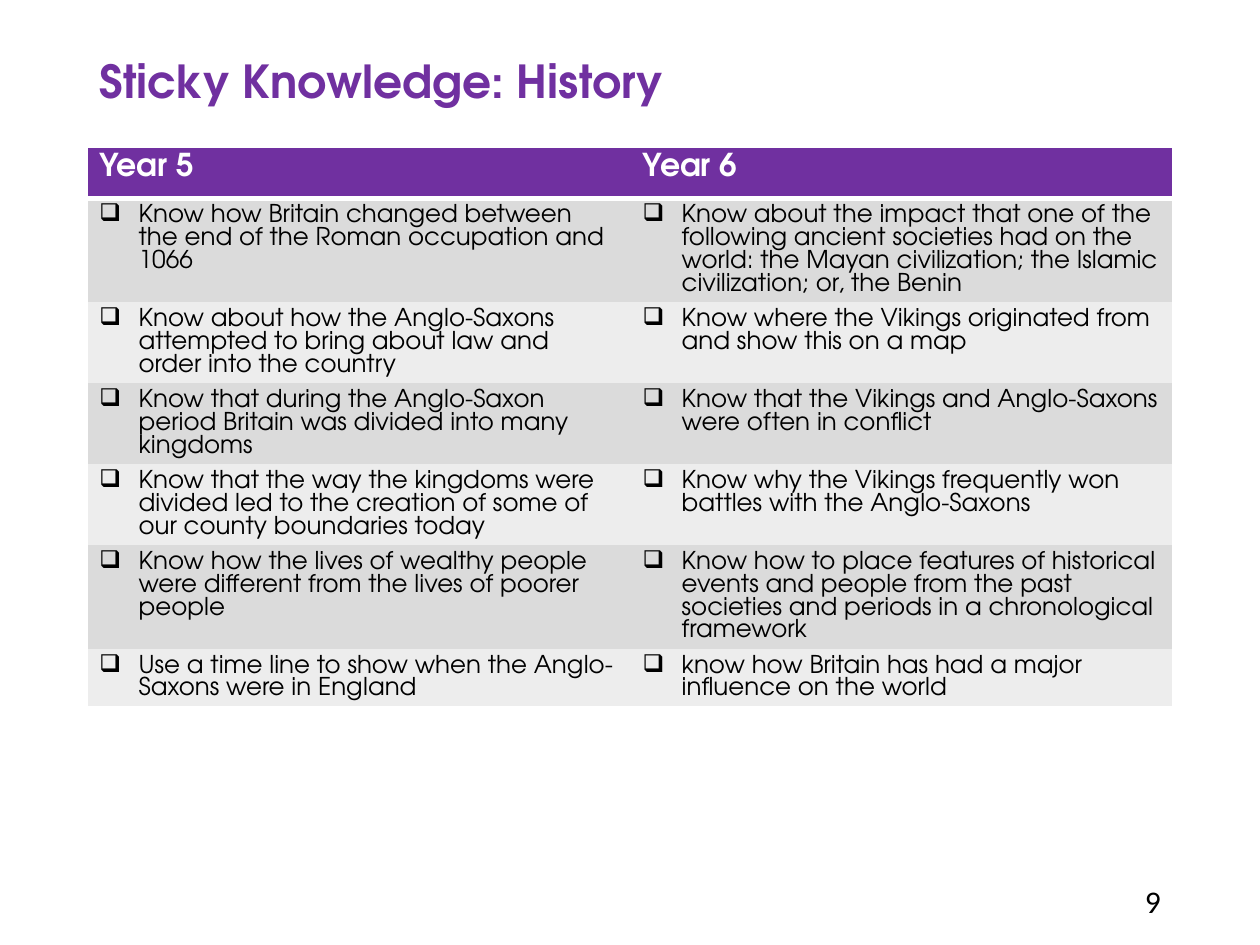
from lxml import etree
from pptx import Presentation
from pptx.dml.color import RGBColor
from pptx.enum.text import MSO_ANCHOR, PP_ALIGN
from pptx.oxml.ns import qn
from pptx.util import Cm, Pt

LEFT, RIGHT = PP_ALIGN.LEFT, PP_ALIGN.RIGHT
MIDDLE = MSO_ANCHOR.MIDDLE
PURPLE = RGBColor(0x70, 0x30, 0xA0)
WHITE = RGBColor(0xFF, 0xFF, 0xFF)
BLACK = RGBColor(0, 0, 0)
BANDS = RGBColor(0xDB, 0xDB, 0xDB), RGBColor(0xED, 0xED, 0xED)
NO_GRID = "{2D5ABB26-0587-4C30-8999-92F81FD0307C}"
BOX_MARK = "q"  # a shadowed box in Wingdings

HEADS = "Year 5", "Year 6"
FACTS = [
    ("Know how Britain changed between the end of the Roman occupation and 1066",
     "Know about the impact that one of the following ancient societies had on the world: "
     "the Mayan civilization; the Islamic civilization; or, the Benin"),
    ("Know about how the Anglo-Saxons attempted to bring about law and order into the country",
     "Know where the Vikings originated from and show this on a map"),
    ("Know that during the Anglo-Saxon period Britain was divided into many kingdoms",
     "Know that the Vikings and Anglo-Saxons were often in conflict"),
    ("Know that the way the kingdoms were divided led to the creation of some of our county "
     "boundaries today",
     "Know why the Vikings frequently won battles with the Anglo-Saxons"),
    ("Know how the lives of wealthy people were different from the lives of poorer people",
     "Know how to place features of historical events and people from the past societies and "
     "periods in a chronological framework"),
    ("Use a time line to show when the Anglo-Saxons were in England",
     "know how Britain has had a major influence on the world"),
]


class Page:
    def __init__(self, slide, font):
        self.slide = slide
        self.font = font

    def style(self, para, size, color, bold=False, font=None):
        for run in para.runs:
            run.font.name = font or self.font
            run.font.size = Pt(size)
            run.font.bold = bold
            run.font.color.rgb = color

    def text(self, words, box, size, color, bold=False, font=None, align=LEFT):
        frame = self.slide.shapes.add_textbox(*map(Cm, box)).text_frame
        frame.word_wrap = True
        frame.vertical_anchor = MIDDLE
        frame.text = words
        para = frame.paragraphs[0]
        para.alignment = align
        self.style(para, size, color, bold, font)
        return para

    def bullet(self, para, mark, indent):
        props = para._p.get_or_add_pPr()
        props.set("marL", str(indent))
        props.set("indent", str(-indent))
        etree.SubElement(props, qn("a:buFont"), typeface="Wingdings", charset="2")
        etree.SubElement(props, qn("a:buChar"), char=mark)

    def border(self, cell, side, width):
        """Draw a white line on one side: L, R, T or B, added in that order."""
        props = cell._tc.get_or_add_tcPr()
        line = etree.SubElement(props, qn("a:ln" + side), w=str(Pt(width)))
        fill = etree.SubElement(line, qn("a:solidFill"))
        etree.SubElement(fill, qn("a:srgbClr"), val=str(WHITE))

    def table(self, heads, facts, box, row_height):
        rows = [heads, *facts]
        last = len(rows) - 1
        grid = self.slide.shapes.add_table(
            len(rows), len(heads), *map(Cm, box), Cm(row_height * len(rows))).table
        grid._tbl.tblPr.find(qn("a:tableStyleId")).text = NO_GRID
        grid.horz_banding = False
        for r, row in enumerate(rows):
            grid.rows[r].height = Cm(row_height)
            for c, words in enumerate(row):
                cell = grid.cell(r, c)
                self.border(cell, "L" if c == 0 else "R", 1)
                if r == 0:
                    self.border(cell, "T", 1)
                if r in (0, last):
                    self.border(cell, "B", 3 if r == 0 else 1)
                cell.fill.solid()
                cell.text_frame.text = words
                para = cell.text_frame.paragraphs[0]
                if r == 0:
                    cell.fill.fore_color.rgb = PURPLE
                    self.style(para, 18, WHITE, True)
                else:
                    cell.fill.fore_color.rgb = BANDS[(r - 1) % 2]
                    para.line_spacing = Pt(13)
                    self.bullet(para, BOX_MARK, Cm(0.79))
                    self.style(para, 14, BLACK)


def main():
    deck = Presentation()
    deck.slide_width, deck.slide_height = Cm(25.4), Cm(19.05)
    page = Page(deck.slides.add_slide(deck.slide_layouts[6]), "TeX Gyre Adventor")
    title = page.text("Sticky Knowledge: History", (1.75, 1.02, 21.9, 1.35), 26, PURPLE, True)
    title.line_spacing = 0.9
    page.table(HEADS, FACTS, (1.75, 2.97, 21.9), 1.03)
    page.text("9", (17.93, 17.65, 5.72, 1.02), 18, BLACK, font="Calibri", align=RIGHT)
    deck.save("out.pptx")


if __name__ == "__main__":
    main()
